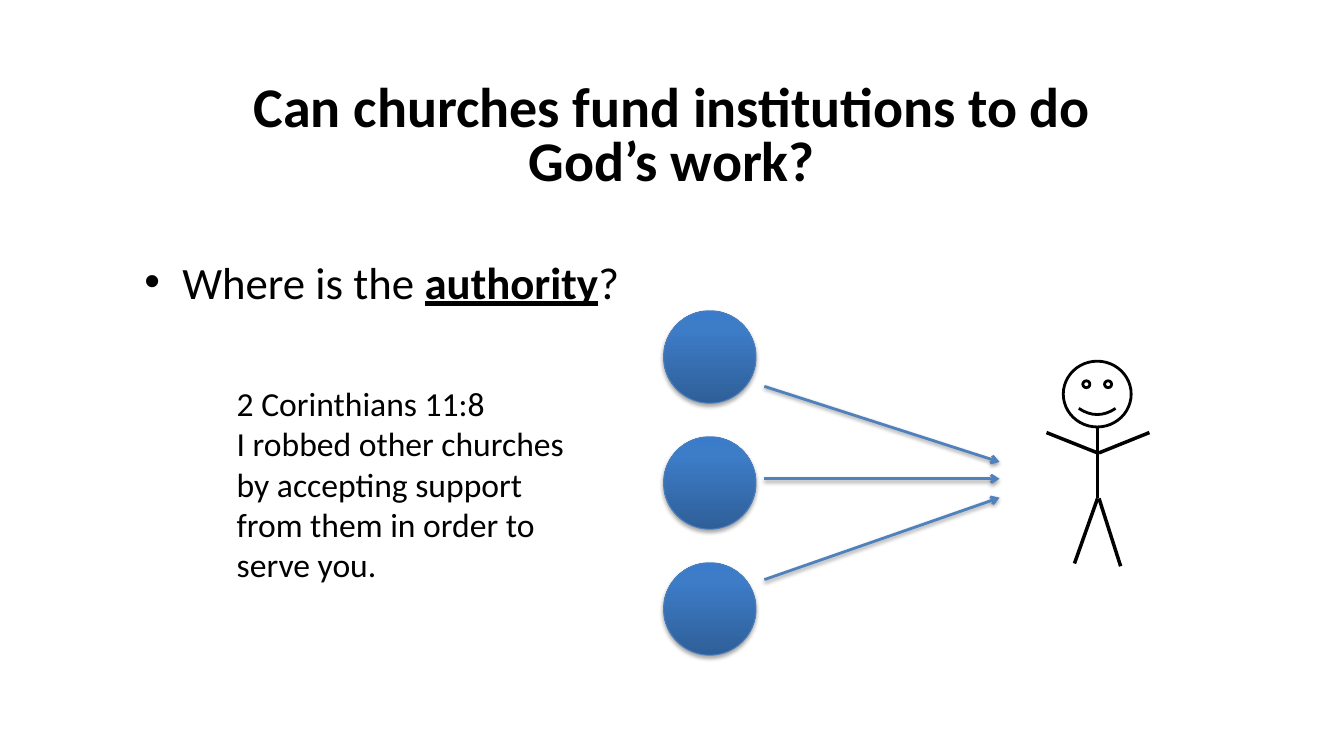
from lxml import etree
from pptx import Presentation
from pptx.dml.color import RGBColor
from pptx.enum.shapes import MSO_CONNECTOR, MSO_SHAPE
from pptx.enum.text import MSO_ANCHOR, MSO_AUTO_SIZE, PP_ALIGN
from pptx.oxml import parse_xml
from pptx.oxml.ns import nsdecls, qn
from pptx.util import Pt

STRAIGHT = MSO_CONNECTOR.STRAIGHT
OVAL, SMILEY = MSO_SHAPE.OVAL, MSO_SHAPE.SMILEY_FACE
TOP, MIDDLE = MSO_ANCHOR.TOP, MSO_ANCHOR.MIDDLE
LEFT, CENTER = PP_ALIGN.LEFT, PP_ALIGN.CENTER
NO_FIT = MSO_AUTO_SIZE.NONE

COLORS = {
    "ink": "000000",
    "arrow": "4F81BD",
    "rim": "4B7EBC",
    "low": "2F5F99",
    "mid": "3D7CC7",
    "high": "3A7CCB",
}
FONT = "Calibri"


def color(name):
    return RGBColor.from_string(COLORS[name])


def place(item, box):
    item.left, item.top, item.width, item.height = (Pt(value) for value in box)


def format_text(para, size, align=LEFT, bold=False):
    para.alignment = align
    para.space_before = Pt(0)
    for span in para.runs:
        span.font.name, span.font.size = FONT, Pt(size)
        span.font.bold = bold
        span.font.color.rgb = color("ink")


def set_shadow(item, opacity=0, distance=0):
    """Give an item its own effect list, with a soft drop shadow if opaque."""
    effects = etree.SubElement(item._element.spPr, qn("a:effectLst"))
    if opacity:
        effects.append(parse_xml(
            f'<a:outerShdw {nsdecls("a")} blurRad="{Pt(3.1)}" dist="{Pt(distance)}" '
            f'dir="5400000" rotWithShape="0"><a:srgbClr val="{COLORS["ink"]}">'
            f'<a:alpha val="{opacity * 1000}"/></a:srgbClr></a:outerShdw>'))


def add_line(shapes, start, end, name, width):
    points = [Pt(value) for value in (*start, *end)]
    line = shapes.add_connector(STRAIGHT, *points)
    line.line.color.rgb = color(name)
    line.line.width = Pt(width)
    return line


def add_title(page, box):
    title = page.shapes.title
    place(title, box)
    frame = title.text_frame
    frame.text = "Can churches fund institutions to do God’s work?"
    frame.vertical_anchor, frame.auto_size = MIDDLE, NO_FIT
    para = frame.paragraphs[0]
    para.line_spacing = 0.8
    format_text(para, 40, CENTER, bold=True)


def add_question(page, box):
    body = page.placeholders[1]
    place(body, box)
    frame = body.text_frame
    frame.vertical_anchor, frame.auto_size = TOP, NO_FIT
    para = frame.paragraphs[0]
    properties = para._p.get_or_add_pPr()
    properties.set("marL", str(Pt(27)))
    properties.set("indent", str(-Pt(27)))
    etree.SubElement(properties, qn("a:buChar")).set("char", "•")
    for words in ("Where is the ", "authority", "?"):
        para.add_run().text = words
    format_text(para, 32)
    key_word = para.runs[1].font
    key_word.bold = key_word.underline = True


def add_verse(page, box):
    frame = page.shapes.add_textbox(*(Pt(value) for value in box)).text_frame
    frame.word_wrap = True
    frame.text = ("2 Corinthians 11:8\nI robbed other churches by accepting "
                  "support from them in order to serve you.")
    for para in frame.paragraphs:
        format_text(para, 24)


def add_churches(page, box, count=3):
    """Stack equal circles from the top to the bottom of the box."""
    left, top, size, height = box
    step = (height - size) / (count - 1)
    stops = "".join(
        f'<a:gs pos="{position * 1000}"><a:srgbClr val="{COLORS[name]}"/></a:gs>'
        for position, name in ((0, "low"), (80, "mid"), (100, "high")))
    for row in range(count):
        church = page.shapes.add_shape(
            OVAL, Pt(left), Pt(top + row * step), Pt(size), Pt(size))
        church.line.color.rgb = color("rim")
        church.line.width = Pt(0.75)
        church._element.spPr.find(qn("a:ln")).addprevious(parse_xml(
            f'<a:gradFill {nsdecls("a")} rotWithShape="1"><a:gsLst>{stops}</a:gsLst>'
            '<a:lin ang="16200000" scaled="0"/></a:gradFill>'))
        set_shadow(church, 35, 1.8)


def add_support_arrows(page, box):
    """Draw arrows that converge from the left side to the right side."""
    left, top, width, height = box
    for start, end in ((0, 54), (height, 79.5), (66, 66)):
        arrow = add_line(page.shapes, (left, top + start),
                         (left + width, top + end), "arrow", 2)
        tail = etree.SubElement(arrow.line._get_or_add_ln(), qn("a:tailEnd"))
        tail.set("type", "arrow")
        set_shadow(arrow, 38, 1.6)


def add_person(page, box):
    """Draw a stick figure as one group."""
    left, top, width, height = box
    group = page.shapes.add_group_shape()
    head = group.shapes.add_shape(SMILEY, Pt(left + 12), Pt(top), Pt(48.5), Pt(47))
    head.fill.background()
    head.line.color.rgb = color("ink")
    head.line.width = Pt(2)
    set_shadow(head)

    spine, shoulder, hip, hand = 36.5, 65.5, 98, 51
    limbs = (
        ((spine, 47.5), (spine, hip)),
        ((spine, shoulder), (0, hand)),
        ((spine + 1, hip), (53, height)),
        ((spine, hip), (20, height - 2)),
        ((spine + 1, shoulder), (width, hand)),
    )
    for start, end in limbs:
        limb = add_line(group.shapes, (left + start[0], top + start[1]),
                        (left + end[0], top + end[1]), "ink", 2.5)
        set_shadow(limb)


def main():
    deck = Presentation()
    deck.slide_width, deck.slide_height = Pt(960), Pt(540)
    page = deck.slides.add_slide(deck.slide_layouts[1])
    add_title(page, (156, 54, 648, 90))
    add_question(page, (96, 178, 648, 326))
    add_verse(page, (162, 270, 252, 152.5))
    add_churches(page, (474, 222, 66, 246))
    add_support_arrows(page, (546, 276, 168, 138))
    add_person(page, (747.5, 258, 73.5, 146.5))
    deck.save("out.pptx")


if __name__ == "__main__":
    main()
